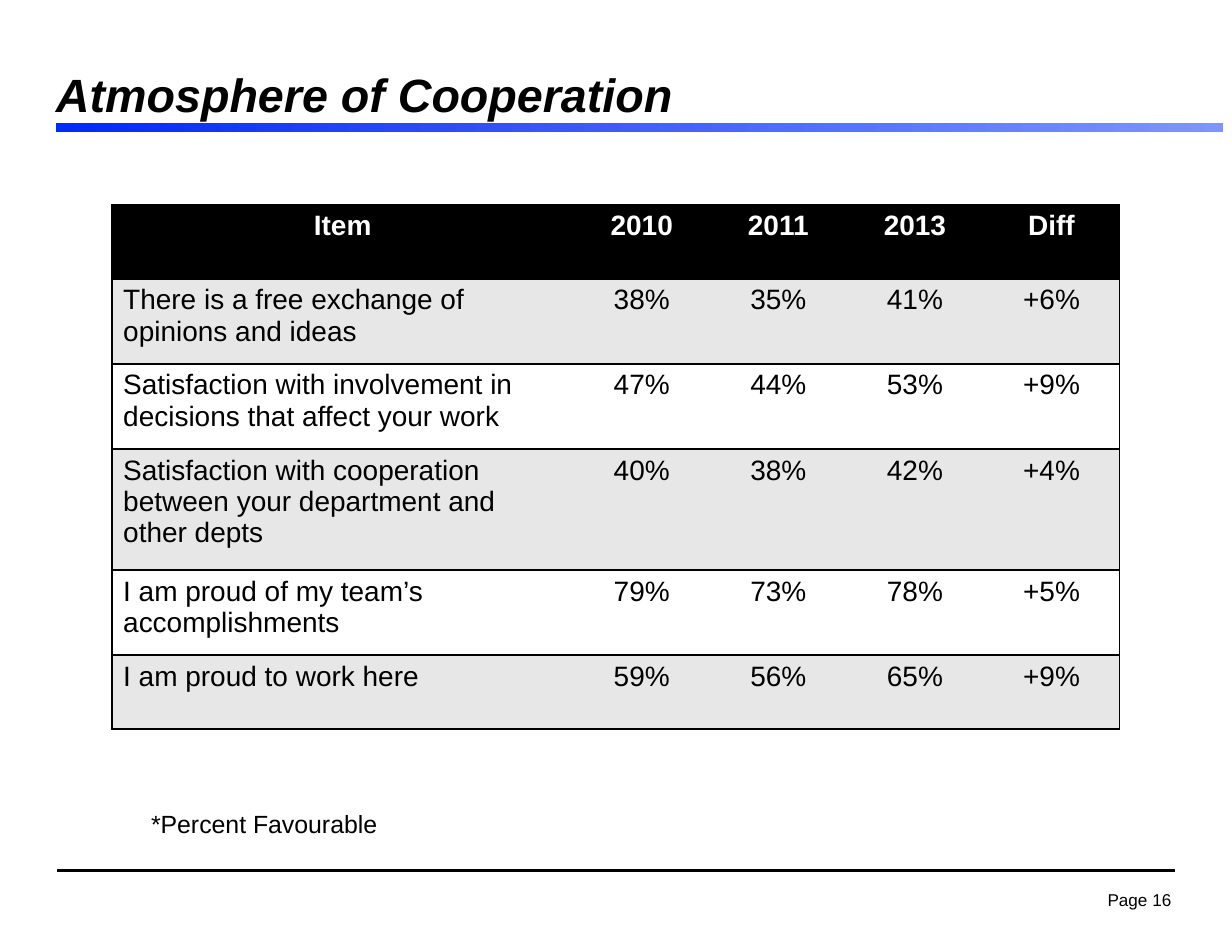
import pptx
import pptx.dml.color
import pptx.enum.dml
import pptx.enum.shapes
import pptx.enum.text
import pptx.oxml
import pptx.oxml.ns
import pptx.util
from lxml import etree

Inches, Pt = pptx.util.Inches, pptx.util.Pt
RGBColor = pptx.dml.color.RGBColor
Align = pptx.enum.text.PP_ALIGN
Anchor = pptx.enum.text.MSO_ANCHOR
qn = pptx.oxml.ns.qn

TITLE = "Atmosphere of Cooperation"
FOOTNOTE = "*Percent Favourable"
PAGE_LABEL = "Page 16"
ROWS = [
    ("Item", "2010", "2011", "2013", "Diff"),
    ("There is a free exchange of opinions and ideas", "38%", "35%", "41%", "+6%"),
    ("Satisfaction with involvement in decisions that affect your work",
     "47%", "44%", "53%", "+9%"),
    ("Satisfaction with cooperation between your department and other depts",
     "40%", "38%", "42%", "+4%"),
    ("I am proud of my team’s accomplishments", "79%", "73%", "78%", "+5%"),
    ("I am proud to work here", "59%", "56%", "65%", "+9%"),
]
COLUMN_WIDTHS = [4.12] + [1.22] * 4
ROW_HEIGHTS = [0.66, 0.76, 0.76, 1.08, 0.76, 0.66]

FONT = "Arial"
BLACK = RGBColor(0x00, 0x00, 0x00)
WHITE = RGBColor(0xFF, 0xFF, 0xFF)
BAND = RGBColor(0xE7, 0xE7, 0xE7)
BAR_START = RGBColor(0x00, 0x2A, 0xF9)
BAR_END = RGBColor(0x7F, 0x94, 0xFC)


def write(frame, text, size=18, color=BLACK, bold=False, italic=False,
          align=Align.LEFT, spacing=None):
    para = frame.paragraphs[0]
    para.alignment = align
    para.line_spacing = spacing
    span = para.add_run()
    span.text = text
    span.font.name, span.font.size = FONT, Pt(size)
    span.font.bold, span.font.italic = bold, italic
    span.font.color.rgb = color


def add_text(page, at, text, margins=(0.1, 0.05), anchor=Anchor.TOP, wrap=True, **style):
    box = page.shapes.add_textbox(*map(Inches, at))
    frame = box.text_frame
    frame.word_wrap, frame.vertical_anchor = wrap, anchor
    frame.margin_left = frame.margin_right = Inches(margins[0])
    frame.margin_top = frame.margin_bottom = Inches(margins[1])
    write(frame, text, **style)


def set_borders(cell, visible):
    """Draw the sides named in visible (L, R, T, B) and clear the others."""
    properties = cell._tc.get_or_add_tcPr()
    for side in "LRTB":
        line = etree.SubElement(properties, qn(f"a:ln{side}"), w=str(Pt(1)))
        if side in visible:
            fill = etree.SubElement(line, qn("a:solidFill"))
            etree.SubElement(fill, qn("a:srgbClr"), val=str(BLACK))
        else:
            etree.SubElement(line, qn("a:noFill"))


def add_footer(page):
    rule = page.shapes.add_connector(
        pptx.enum.shapes.MSO_CONNECTOR.STRAIGHT,
        Inches(0.51), Inches(7.77), Inches(10.49), Inches(7.77))
    rule.line.color.rgb = BLACK
    rule.line.width = Pt(2)
    etree.SubElement(rule._element.spPr, qn("a:effectLst"))
    add_text(page, (9.76, 7.9, 0.81, 0.28), PAGE_LABEL, margins=(0.11, 0.06),
             wrap=False, size=11, align=Align.RIGHT, spacing=0.9)


def add_title(page):
    bar = page.shapes.add_shape(
        pptx.enum.shapes.MSO_SHAPE.RECTANGLE,
        Inches(0.5), Inches(1.1), Inches(10.42), Inches(0.08))
    bar.shadow.inherit = False
    bar.line.fill.background()
    bar.fill.gradient()
    bar.fill.gradient_angle = 0
    for stop, color, position in zip(bar.fill.gradient_stops, (BAR_START, BAR_END), (0, 1)):
        stop.color.rgb = color
        stop.position = position
    add_text(page, (0.5, 0.67, 10.33, 0.42), TITLE, margins=(0, 0),
             anchor=Anchor.BOTTOM, size=30, bold=True, italic=True)


def add_survey_table(page):
    table = page.shapes.add_table(
        len(ROWS), len(COLUMN_WIDTHS), Inches(1), Inches(1.83),
        Inches(sum(COLUMN_WIDTHS)), Inches(sum(ROW_HEIGHTS))).table
    table.horz_banding = False
    for column, width in zip(table.columns, COLUMN_WIDTHS):
        column.width = Inches(width)
    for r, (values, height) in enumerate(zip(ROWS, ROW_HEIGHTS)):
        table.rows[r].height = Inches(height)
        header = r == 0
        background = BLACK if header else BAND if r % 2 else WHITE
        for c, value in enumerate(values):
            cell = table.cell(r, c)
            sides = "TB" + ("L" if c == 0 else "R" if c == len(values) - 1 else "")
            set_borders(cell, sides)
            cell.fill.solid()
            cell.fill.fore_color.rgb = background
            write(cell.text_frame, value, bold=header,
                  color=WHITE if header else BLACK,
                  align=Align.CENTER if header or c else Align.LEFT)


def main():
    deck = pptx.Presentation()
    deck.slide_width, deck.slide_height = Inches(11), Inches(8.5)
    page = deck.slides.add_slide(deck.slide_layouts[6])
    add_footer(page)
    add_title(page)
    add_survey_table(page)
    add_text(page, (1.25, 7.17, 3.58, 0.37), FOOTNOTE, size=16)
    deck.save("out.pptx")


if __name__ == "__main__":
    main()
